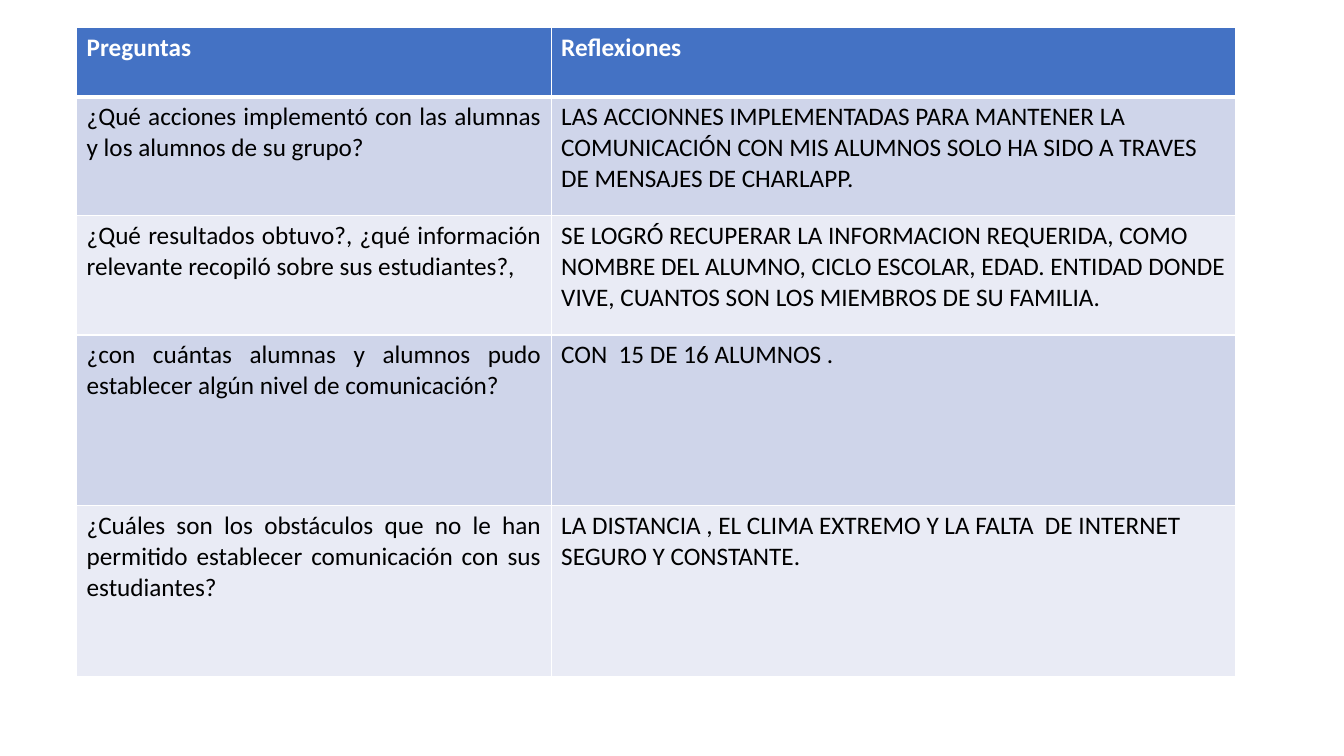
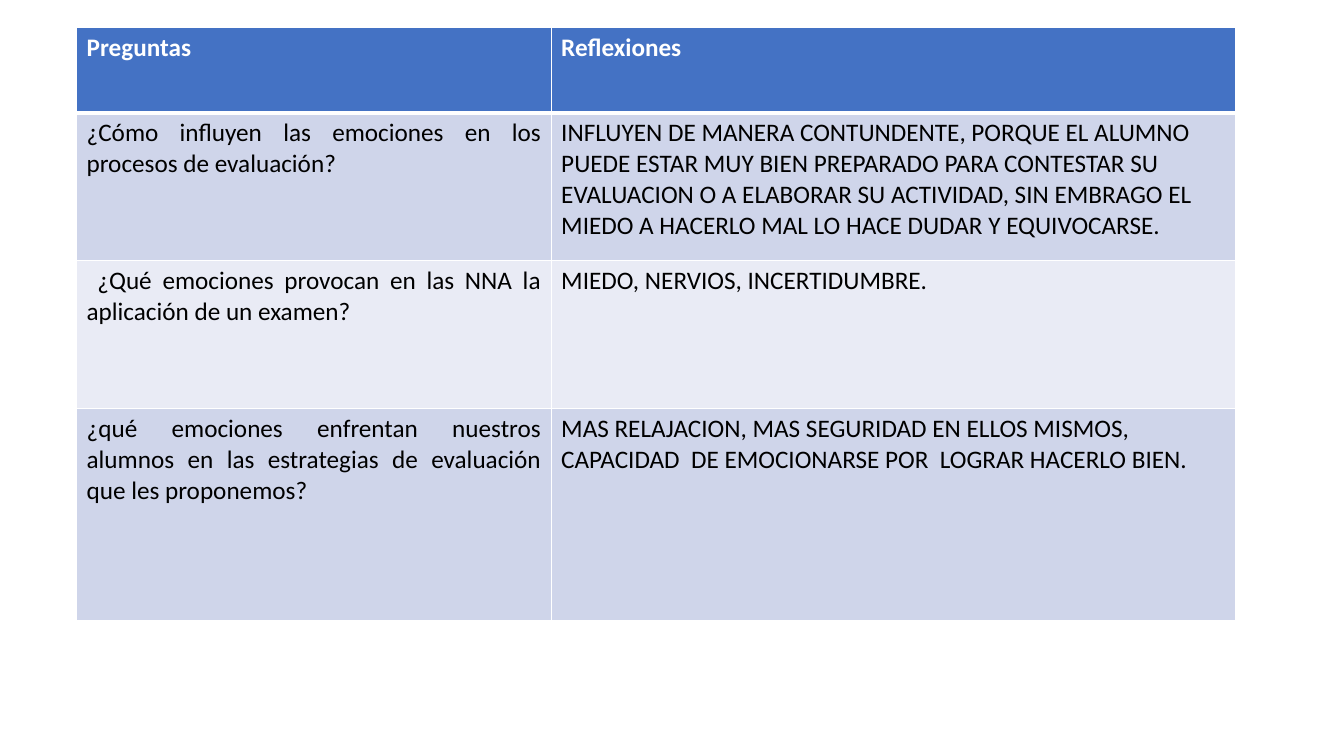
from lxml import etree
from pptx import Presentation
from pptx.dml.color import RGBColor
from pptx.enum.text import PP_ALIGN
from pptx.oxml.ns import qn
from pptx.util import Cm, Pt

JUSTIFY, LEFT = PP_ALIGN.JUSTIFY, PP_ALIGN.LEFT
WHITE = RGBColor(0xFF, 0xFF, 0xFF)
BLACK = RGBColor(0x00, 0x00, 0x00)
HEADER_BLUE = RGBColor(0x44, 0x72, 0xC4)
BAND_COLORS = (RGBColor(0xCF, 0xD5, 0xEA), RGBColor(0xE9, 0xEB, 0xF5))
FONT_NAME = "Calibri"
FONT_SIZE = Pt(18)
THIN, THICK = Pt(1), Pt(3)
TABLE_LEFT, TABLE_TOP = Cm(1.93), Cm(0.69)
COLUMN_WIDTHS = (Cm(11.96), Cm(17.25))
BLANK_LAYOUT = 6
HEADER = ("Preguntas", "Reflexiones")

COMMUNICATION_ROWS = (
    ("¿Qué acciones implementó con las alumnas y los alumnos de su grupo?",
     "LAS ACCIONNES IMPLEMENTADAS PARA MANTENER LA COMUNICACIÓN CON MIS ALUMNOS "
     "SOLO HA SIDO A TRAVES DE MENSAJES DE CHARLAPP."),
    ("¿Qué resultados obtuvo?, ¿qué información relevante recopiló sobre sus estudiantes?, ",
     "SE LOGRÓ RECUPERAR LA INFORMACION REQUERIDA, COMO NOMBRE DEL ALUMNO, CICLO "
     "ESCOLAR, EDAD. ENTIDAD DONDE VIVE, CUANTOS SON LOS MIEMBROS DE SU FAMILIA."),
    ("¿con cuántas alumnas y alumnos pudo establecer algún nivel de comunicación?",
     "CON  15 DE 16 ALUMNOS ."),
    ("¿Cuáles son los obstáculos que no le han permitido establecer comunicación "
     "con sus estudiantes?",
     "LA DISTANCIA , EL CLIMA EXTREMO Y LA FALTA  DE INTERNET SEGURO Y CONSTANTE."),
)
EMOTION_ROWS = (
    ("¿Cómo influyen las emociones en los procesos de evaluación?",
     "INFLUYEN DE MANERA CONTUNDENTE, PORQUE EL ALUMNO PUEDE ESTAR MUY BIEN PREPARADO "
     "PARA CONTESTAR SU EVALUACION O A ELABORAR SU ACTIVIDAD, SIN EMBRAGO EL MIEDO A "
     "HACERLO MAL LO HACE DUDAR Y EQUIVOCARSE."),
    (" ¿Qué emociones provocan en las NNA la aplicación de un examen?",
     "MIEDO, NERVIOS, INCERTIDUMBRE."),
    ("¿qué emociones enfrentan nuestros alumnos en las estrategias de evaluación "
     "que les proponemos?",
     "MAS RELAJACION, MAS SEGURIDAD EN ELLOS MISMOS, CAPACIDAD  DE EMOCIONARSE POR  "
     "LOGRAR HACERLO BIEN."),
)
SLIDES = (
    (COMMUNICATION_ROWS, (Cm(1.75), Cm(3), Cm(3), Cm(4.3), Cm(4.3))),
    (EMOTION_ROWS, (Cm(2.15), Cm(3.73), Cm(3.73), Cm(5.33))),
)


def set_borders(cell, top, bottom):
    """Draw white borders around a cell, thin at its sides."""
    properties = cell._tc.get_or_add_tcPr()
    for tag, width in (("a:lnL", THIN), ("a:lnR", THIN), ("a:lnT", top), ("a:lnB", bottom)):
        line = etree.SubElement(properties, qn(tag), w=str(width))
        fill = etree.SubElement(line, qn("a:solidFill"))
        etree.SubElement(fill, qn("a:srgbClr"), val=str(WHITE))


def fill_cell(cell, text, row, column):
    """Write and style one cell according to its row and column."""
    is_header = row == 0
    set_borders(cell, THICK if row == 1 else THIN, THICK if is_header else THIN)
    cell.fill.solid()
    cell.fill.fore_color.rgb = HEADER_BLUE if is_header else BAND_COLORS[(row - 1) % 2]
    cell.text_frame.text = text
    paragraph = cell.text_frame.paragraphs[0]
    paragraph.alignment = JUSTIFY if column == 0 and not is_header else LEFT
    font = paragraph.runs[0].font
    font.name = FONT_NAME
    font.size = FONT_SIZE
    font.bold = is_header
    font.color.rgb = WHITE if is_header else BLACK


def add_question_table(slide, left, top, column_widths, row_heights, rows):
    """Add a table of questions and reflections below a shared header."""
    table = slide.shapes.add_table(
        len(row_heights), len(column_widths), left, top,
        sum(column_widths), sum(row_heights)).table
    for column, width in zip(table.columns, column_widths):
        column.width = width
    for row, height in zip(table.rows, row_heights):
        row.height = height
    for row, texts in enumerate((HEADER, *rows)):
        for column, text in enumerate(texts):
            fill_cell(table.cell(row, column), text, row, column)


def main():
    """Build and save the presentation."""
    presentation = Presentation()
    presentation.slide_width, presentation.slide_height = Cm(33.87), Cm(19.05)
    for rows, row_heights in SLIDES:
        slide = presentation.slides.add_slide(presentation.slide_layouts[BLANK_LAYOUT])
        add_question_table(slide, TABLE_LEFT, TABLE_TOP, COLUMN_WIDTHS, row_heights, rows)
    presentation.save("out.pptx")


if __name__ == "__main__":
    main()
